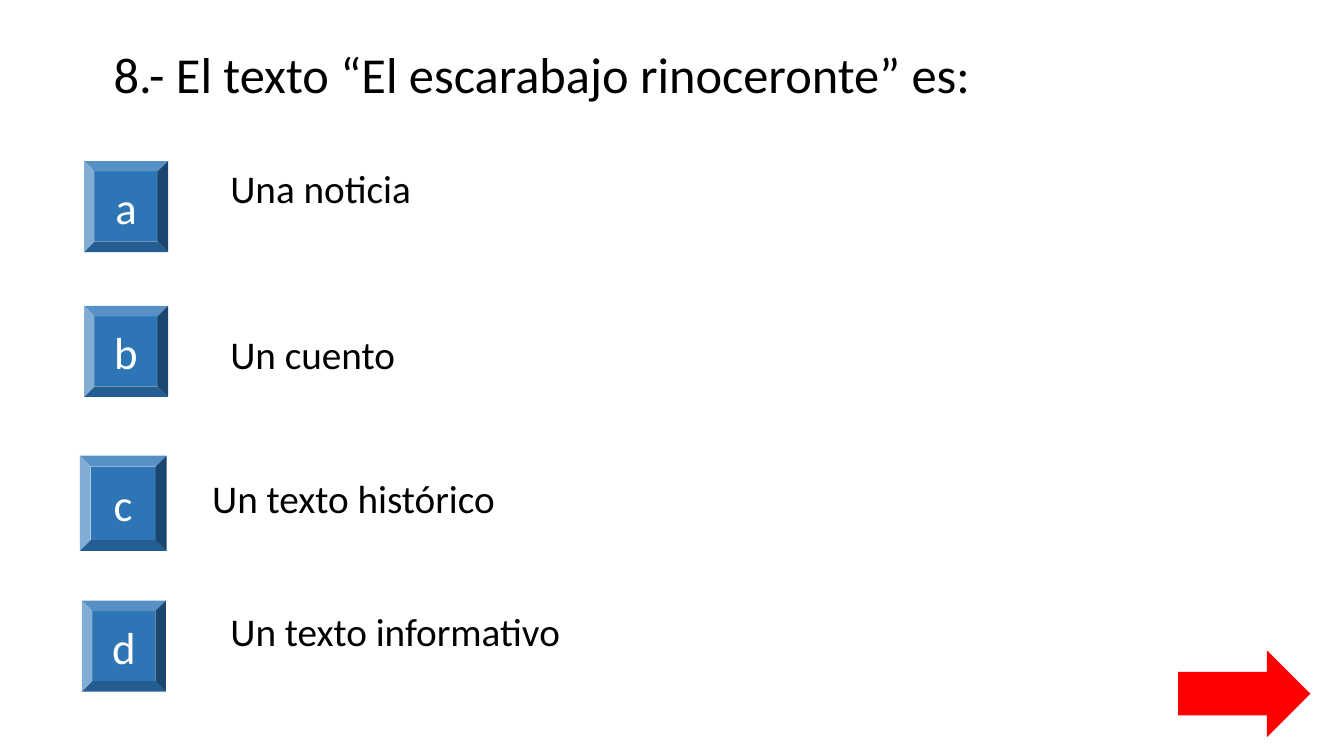
from pptx import Presentation
from pptx import util as u
from pptx.dml.color import RGBColor
from pptx.enum import shapes, text

Pt = u.Pt
HUES = {"ink": "000000", "paper": "FFFFFF", "key": "2E75B6", "next": "FF0000"}
FONT = "Calibri"

# letter, key box, answer, answer box (left, top, width, height in points)
CHOICES = [
    ("a", (60, 115, 60, 65), "Una noticia", (157.5, 114, 756, 41)),
    ("b", (60, 218.5, 60, 65), "Un cuento", (157.5, 232.5, 584, 41)),
    ("c", (57, 325.5, 62, 68), "Un texto histórico", (144.5, 335.5, 734, 41)),
    ("d", (58.5, 429, 60, 65), "Un texto informativo", (157.5, 430.5, 708, 41)),
]


def color(name):
    return RGBColor.from_string(HUES[name])


def write(shape, words, size, hue, para=None, **frame):
    """Put one styled paragraph in a shape, with paragraph and frame formats."""
    body = shape.text_frame
    for key, value in {"word_wrap": True, **frame}.items():
        setattr(body, key, value)
    line = body.paragraphs[0]
    for key, value in (para or {}).items():
        setattr(line, key, value)
    run = line.add_run()
    run.text = words
    for key, value in {"name": FONT, "size": Pt(size)}.items():
        setattr(run.font, key, value)
    run.font.color.rgb = color(hue)


def label(slide, box, words, size, para=None, **frame):
    shape = slide.shapes.add_textbox(*map(Pt, box))
    write(shape, words, size, "ink", para, **frame)


def solid(slide, kind, box, hue):
    shape = slide.shapes.add_shape(kind, *map(Pt, box))
    shape.shadow.inherit = False
    shape.fill.solid()
    shape.fill.fore_color.rgb = color(hue)
    shape.line.fill.background()
    return shape


def choice(slide, letter, key_box, answer, box):
    key = solid(slide, shapes.MSO_SHAPE.BEVEL, key_box, "key")
    write(key, letter, 32, "paper", {"alignment": text.PP_ALIGN.CENTER},
          vertical_anchor=text.MSO_ANCHOR.MIDDLE)
    label(slide, box, answer, 28, auto_size=text.MSO_AUTO_SIZE.SHAPE_TO_FIT_TEXT)


def main():
    deck = Presentation()
    deck.slide_width, deck.slide_height = Pt(960), Pt(540)
    slide = deck.slides.add_slide(deck.slide_layouts[6])
    label(slide, (66, 29, 828, 52), " 8.- El texto “El escarabajo rinoceronte” es:", 36,
          {"line_spacing": 0.9}, vertical_anchor=text.MSO_ANCHOR.MIDDLE)
    for row in CHOICES:
        choice(slide, *row)
    solid(slide, shapes.MSO_SHAPE.RIGHT_ARROW, (841.5, 464.5, 94.5, 62), "next")
    deck.save("out.pptx")


if __name__ == "__main__":
    main()
